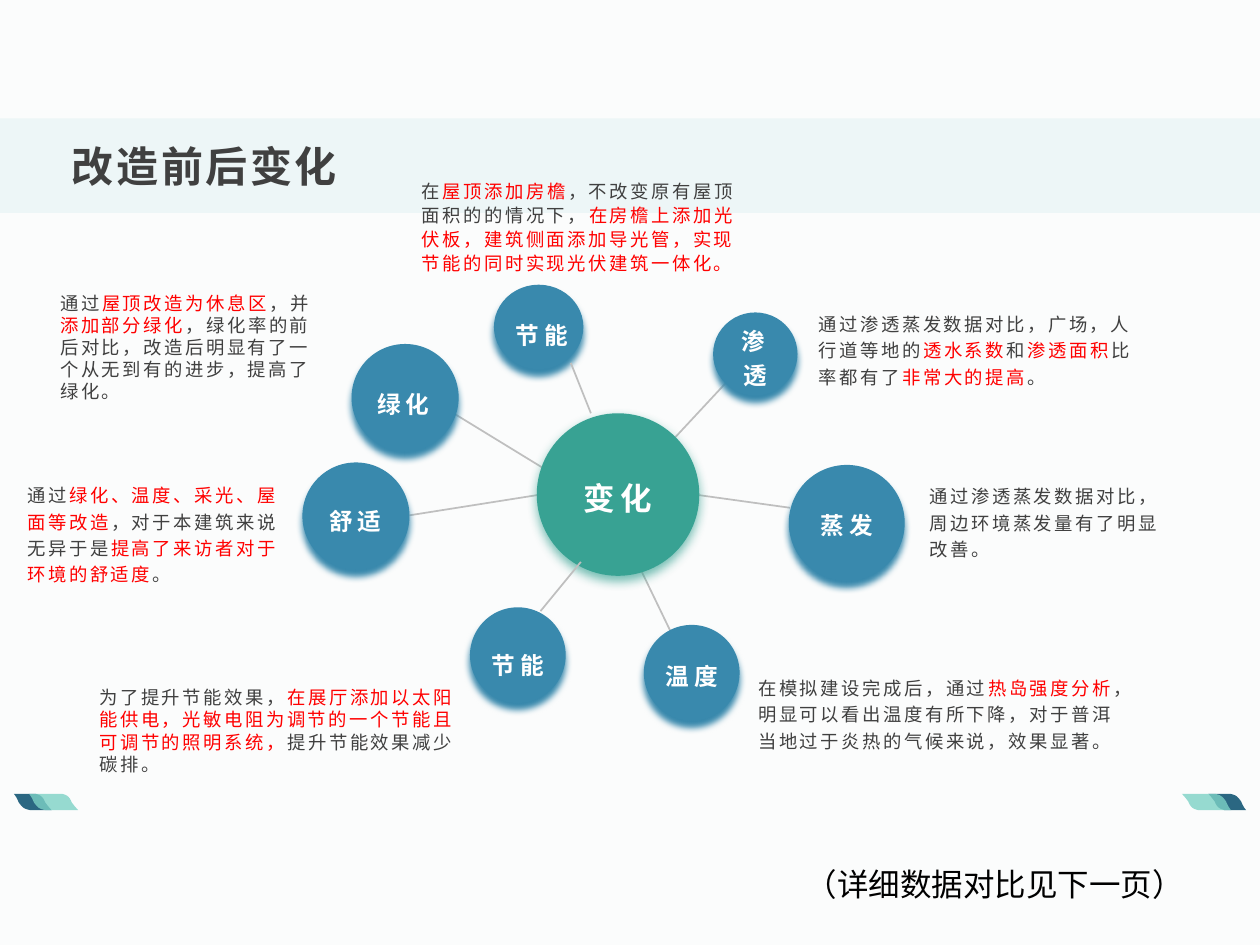
from dataclasses import dataclass

from lxml import etree
from pptx import Presentation
from pptx.dml.color import RGBColor
from pptx.enum.shapes import MSO_CONNECTOR, MSO_SHAPE
from pptx.enum.text import MSO_ANCHOR, MSO_AUTO_SIZE, PP_ALIGN
from pptx.oxml.ns import qn
from pptx.util import Inches, Pt

LEFT, CENTER = PP_ALIGN.LEFT, PP_ALIGN.CENTER
TOP, MIDDLE, BOTTOM = MSO_ANCHOR.TOP, MSO_ANCHOR.MIDDLE, MSO_ANCHOR.BOTTOM
NO_FIT, GROW = MSO_AUTO_SIZE.NONE, MSO_AUTO_SIZE.SHAPE_TO_FIT_TEXT
STRAIGHT = MSO_CONNECTOR.STRAIGHT
RECT, OVAL = MSO_SHAPE.RECTANGLE, MSO_SHAPE.OVAL


@dataclass(frozen=True)
class Theme:
    font: str = "Arial"
    page: str = "FBFCFC"
    band: str = "EDF6F7"
    ink: str = "404040"
    accent: str = "FF0000"
    black: str = "000000"
    white: str = "FFFFFF"
    spoke: str = "BFBFBF"
    node: str = "3989AD"
    hub: str = "38A293"
    leaf_dark: str = "2B6782"
    leaf_light: str = "7DD2C6"
    title_size: float = 24
    hub_size: float = 18
    node_size: float = 13.5
    body_size: float = 10.5


T = Theme()
TITLE = {"size": T.title_size, "bold": True, "color": T.ink, "spacing": 1.5}
HUB = {"size": T.hub_size, "bold": True, "color": T.white, "spacing": 3}
NODE = {**HUB, "size": T.node_size}
BODY = {"size": T.body_size, "color": T.ink, "spacing": 1.5}
NOTE = {"size": T.hub_size, "color": T.black}
TIGHT = (0.07, 0.04)

# Spokes as x1, y1, x2, y2
BACK_SPOKES = [
    (5.08, 4.51, 5.36, 5.09), (3.6, 3.28, 4.45, 3.8), (4.26, 3.93, 3.25, 4.09),
    (5.55, 3.93, 6.27, 4.03), (5.76, 3.04, 5.36, 3.47),
]
FRONT_SPOKES = [(4.53, 2.88, 4.69, 3.28), (4.29, 4.85, 4.61, 4.46)]

# Label, circle box, circle rotation, label box
NODES = [
    ("蒸发", (6.26, 3.69, 0.92, 0.92), 14.6, (6.37, 3.77, 0.7, 0.75)),
    ("绿化", (2.79, 2.73, 0.85, 0.85), 0, (2.87, 2.84, 0.66, 0.69)),
    ("舒适", (2.4, 3.67, 0.85, 0.85), 0, (2.49, 3.8, 0.66, 0.62)),
    ("渗透", (5.66, 2.48, 0.67, 0.66), 0, (5.7, 2.48, 0.59, 0.68)),
    ("温度", (5.11, 4.96, 0.76, 0.76), 8.3, (5.16, 5.02, 0.66, 0.65)),
    ("节能", (3.92, 2.26, 0.71, 0.67), 0, (3.97, 2.29, 0.66, 0.69)),
    ("节能", (3.73, 4.82, 0.76, 0.76), 8.3, (3.78, 4.93, 0.66, 0.65)),
]

# Box, line spacing, text; every second part between bars is highlighted
CAPTIONS = [
    ((7.28, 3.77, 2.16, 0.74), 1.2, "通过渗透蒸发数据对比，周边环境蒸发量有了明显改善。"),
    ((0.38, 2.27, 2.34, 1.06), 1.0, "通过|屋顶改造为休息区|，并|添加部分绿化|"
     "，绿化率的前后对比，改造后明显有了一个从无到有的进步，提高了绿化。"),
    ((0.12, 3.76, 2.31, 0.97), 1.2, "通过|绿化、温度、采光、屋面等改造|"
     "，对于本建筑来说无异于是|提高了来访者对于环境的舒适度|。"),
    ((5.92, 5.29, 3.13, 0.76), 1.2, "在模拟建设完成后，通过|热岛强度分析|"
     "，明显可以看出温度有所下降，对于普洱当地过于炎热的气候来说，效果显著。"),
    ((6.4, 2.4, 2.76, 0.93), 1.2, "通过渗透蒸发数据对比，广场，人行道等地的|透水系数|和|"
     "渗透面积|比率都有了|非常大的提高|。"),
    ((3.25, 1.36, 2.76, 0.93), 1.1, "在|屋顶添加房檐|，不改变原有屋顶面积的的情况下，|"
     "在房檐上添加光伏板，建筑侧面添加导光管，实现节能的同时实现光伏建筑一体化。"),
    ((0.69, 5.4, 3.15, 1.39), 1.0, "为了提升节能效果，|在展厅添加以太阳能供电，"
     "光敏电阻为调节的一个节能且可调节的照明系统，|提升节能效果减少碳排。"),
]

# Leaf outlines: a pair is a corner, three pairs are a Bézier curve
DARK_LEAF = [
    [(0.11, 6.3)], [(0.28, 6.3)],
    [(0.32, 6.31), (0.34, 6.32), (0.36, 6.37)], [(0.39, 6.41), (0.41, 6.43), (0.41, 6.43)],
    [(0.24, 6.43)],
    [(0.19, 6.42), (0.18, 6.41), (0.15, 6.37)], [(0.13, 6.32), (0.11, 6.3), (0.11, 6.3)],
]
LIGHT_LEAF = [
    [(0.62, 6.43)],
    [(0.62, 6.43), (0.6, 6.41), (0.57, 6.37)], [(0.55, 6.32), (0.53, 6.31), (0.49, 6.3)],
    [(0.23, 6.3)],
    [(0.23, 6.3), (0.25, 6.32), (0.27, 6.37)], [(0.3, 6.41), (0.31, 6.42), (0.36, 6.43)],
]


def inches(values):
    return [Inches(v) for v in values]


def set_attrs(obj, values):
    for name, value in values.items():
        setattr(obj, name, value)


def paint(sp, color):
    sp.fill.solid()
    sp.fill.fore_color.rgb = RGBColor.from_string(color)
    sp.line.fill.background()
    sp.shadow.inherit = False


def write(sp, text, style, align=LEFT, anchor=TOP, spacing=1.0, insets=(0.1, 0.05), fit=NO_FIT):
    tf = sp.text_frame
    x, y = inches(insets)
    set_attrs(tf, {"word_wrap": True, "auto_size": fit, "vertical_anchor": anchor,
                   "margin_left": x, "margin_right": x, "margin_top": y, "margin_bottom": y})
    p = tf.paragraphs[0]
    set_attrs(p, {"alignment": align, "line_spacing": spacing})
    for i, part in enumerate(text.split("|")):
        if not part:
            continue
        r = p.add_run()
        r.text = part
        set_attrs(r.font, {"name": T.font, "size": Pt(style["size"]),
                           "bold": style.get("bold", False)})
        r.font.color.rgb = RGBColor.from_string(T.accent if i % 2 else style["color"])
        rPr = r.font._element
        rPr.set("spc", str(int(style.get("spacing", 0) * 100)))
        etree.SubElement(rPr, qn("a:ea"), typeface=T.font)


def add_text(slide, box, text, style, **layout):
    write(slide.shapes.add_textbox(*inches(box)), text, style, **layout)


def add_circle(slide, box, color, alpha, blur, dist, rotation=0):
    sp = slide.shapes.add_shape(OVAL, *inches(box))
    sp.rotation = rotation
    paint(sp, color)
    effects = sp._element.spPr.find(qn("a:effectLst"))
    shadow = etree.SubElement(effects, qn("a:outerShdw"), blurRad=str(Pt(blur)),
                              dist=str(Pt(dist)), dir="5400000", algn="t", rotWithShape="0")
    clr = etree.SubElement(shadow, qn("a:srgbClr"), val=color)
    etree.SubElement(clr, qn("a:alpha"), val=str(alpha * 1000))
    return sp


def add_spoke(slide, ends):
    line = slide.shapes.add_connector(STRAIGHT, *inches(ends))
    line.line.color.rgb = RGBColor.from_string(T.spoke)
    line.line.width = Pt(1)
    etree.SubElement(line._element.spPr, qn("a:effectLst"))


def trace(outline, steps=8):
    points = list(outline[0])
    for part in outline[1:]:
        if len(part) == 1:
            points += part
            continue
        curve = [points[-1], *part]
        for t in (n / steps for n in range(1, steps + 1)):
            weights = ((1 - t) ** 3, 3 * t * (1 - t) ** 2, 3 * t * t * (1 - t), t ** 3)
            points.append(tuple(sum(w * c[axis] for w, c in zip(weights, curve))
                                for axis in (0, 1)))
    return points


def add_leaves(slide, turned):
    group = slide.shapes.add_group_shape()
    for outline, color, alpha in ((DARK_LEAF, T.leaf_dark, 100), (LIGHT_LEAF, T.leaf_light, 80)):
        points = [(10 - x, 12.73 - y) if turned else (x, y) for x, y in trace(outline)]
        points = [inches(point) for point in points]
        builder = group.shapes.build_freeform(*points[0])
        builder.add_line_segments(points[1:], close=True)
        sp = builder.convert_to_shape()
        paint(sp, color)
        clr = sp._element.spPr.find(qn("a:solidFill"))[0]
        etree.SubElement(clr, qn("a:alpha"), val=str(alpha * 1000))


def add_title(slide, box, text):
    sp = slide.shapes.title
    set_attrs(sp, dict(zip(("left", "top", "width", "height"), inches(box))))
    write(sp, text, TITLE, anchor=BOTTOM, spacing=0.9, insets=TIGHT)
    slide.shapes._spTree.append(sp._element)  # in front of the band


def main():
    prs = Presentation()
    prs.slide_width, prs.slide_height = inches((10, 7.5))
    slide = prs.slides.add_slide(prs.slide_layouts[5])
    slide.background.fill.solid()
    slide.background.fill.fore_color.rgb = RGBColor.from_string(T.page)

    # Title band and corner ornaments
    paint(slide.shapes.add_shape(RECT, *inches((0, 0.94, 10, 0.75))), T.band)
    for turned in (False, True):
        add_leaves(slide, turned)
    add_title(slide, (0.5, 1.06, 9, 0.5), "改造前后变化")

    # Hub, nodes and spokes
    for ends in BACK_SPOKES:
        add_spoke(slide, ends)
    hub = add_circle(slide, (4.26, 3.28, 1.29, 1.29), T.hub, 70, 6, 3)
    write(hub, "变化", HUB, align=CENTER, anchor=MIDDLE, spacing=1.2, insets=TIGHT)
    for label, circle, rotation, box in NODES:
        add_circle(slide, circle, T.node, 100, 4, 4, rotation)
        add_text(slide, box, label, NODE, align=CENTER, anchor=MIDDLE, spacing=1.2)
    for ends in FRONT_SPOKES:
        add_spoke(slide, ends)

    # Captions and closing note
    for box, spacing, text in CAPTIONS:
        add_text(slide, box, text, BODY, spacing=spacing)
    add_text(slide, (5.92, 6.82, 3.95, 0.4), "（详细数据对比见下一页）", NOTE, align=CENTER, fit=GROW)

    prs.save("out.pptx")


if __name__ == "__main__":
    main()
